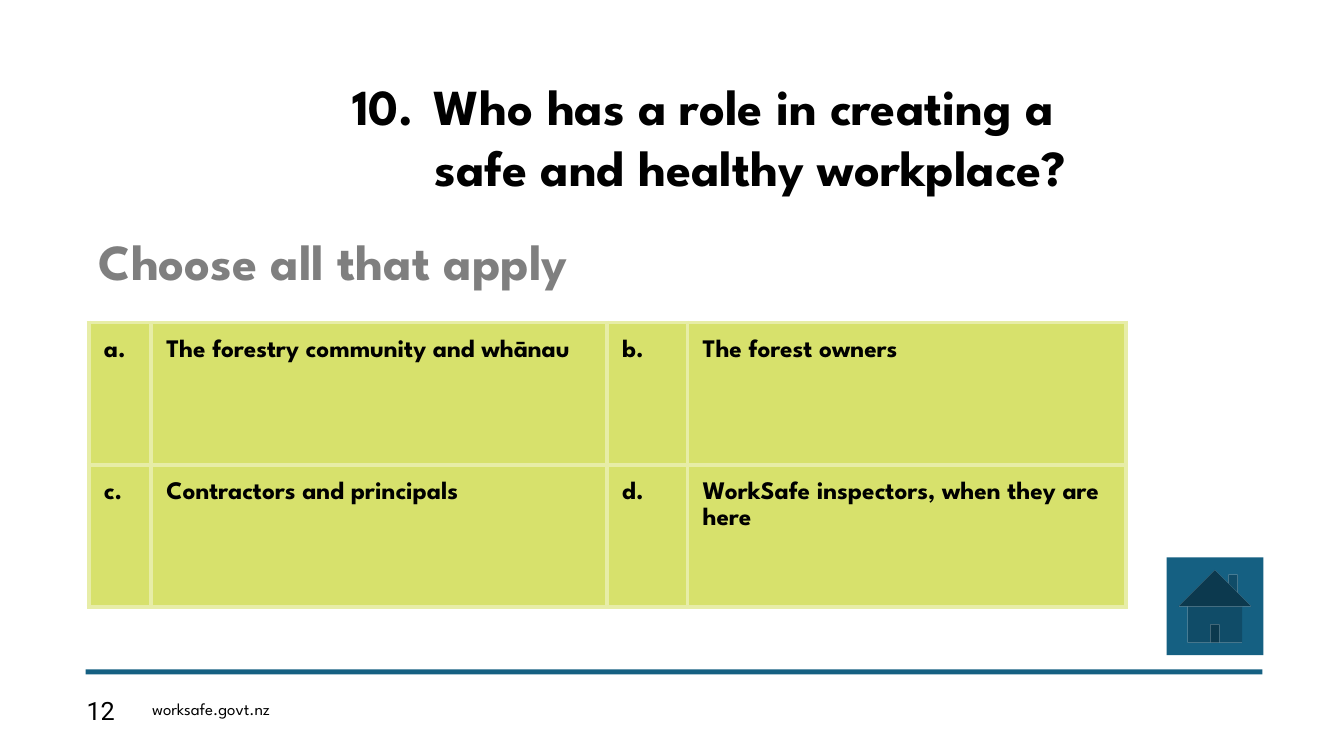
from lxml import etree
from pptx import Presentation
from pptx.dml.color import RGBColor as RGB
from pptx.enum.shapes import MSO_SHAPE as SHAPE
from pptx.enum.text import MSO_ANCHOR as ANCHOR, PP_ALIGN as ALIGN
from pptx.oxml.ns import qn
from pptx.util import Inches, Pt

HUES = {"ink": "000000", "gray": "7F7F7F", "blue": "156082",
        "lime": "D7E16C", "edge": "E7EDA7"}


class Deck:
    """Holds the style and the current slide."""

    def __init__(self):
        self.show = Presentation()
        self.show.slide_width = Inches(13.33)
        self.show.slide_height = Inches(7.5)
        self.slide = self.show.slides.add_slide(self.show.slide_layouts[6])
        self.face = "League Spartan"

    def hue(self, name):
        return RGB.from_string(HUES[name])

    def style(self, para, size, hue="ink", bold=False, face=None):
        for run in para.runs:
            run.font.size = Pt(size)
            run.font.name = face or self.face
            run.font.bold = bold
            run.font.color.rgb = self.hue(hue)

    def text(self, words, x, y, w, h, size, **look):
        frame = self.slide.shapes.add_textbox(
            Inches(x), Inches(y), Inches(w), Inches(h)).text_frame
        frame.word_wrap = True
        frame.text = words
        self.style(frame.paragraphs[0], size, **look)
        return frame

    def title(self, words, start, x, y, w, h):
        frame = self.text(words, x, y, w, h, 36, bold=True)
        frame.vertical_anchor = ANCHOR.MIDDLE
        frame.margin_left = frame.margin_right = 0
        frame.margin_top = frame.margin_bottom = 0
        para = frame.paragraphs[0]
        para.alignment = ALIGN.CENTER
        props = para._p.get_or_add_pPr()
        props.set("marL", str(Inches(0.81)))
        props.set("indent", str(-Inches(0.81)))
        etree.SubElement(props, qn("a:buFont"), typeface="+mj-lt")
        etree.SubElement(props, qn("a:buAutoNum"), type="arabicPeriod",
                         startAt=str(start))

    def shape(self, kind, x, y, w, h, hue):
        item = self.slide.shapes.add_shape(
            kind, Inches(x), Inches(y), Inches(w), Inches(h))
        item.shadow.inherit = False
        item.fill.solid()
        item.fill.fore_color.rgb = self.hue(hue)
        item.line.fill.background()

    def edge(self, cell):
        props = cell._tc.get_or_add_tcPr()
        for spot, side in enumerate(("lnL", "lnR", "lnT", "lnB")):
            line = etree.Element(qn("a:" + side), w=str(Pt(3)))
            fill = etree.SubElement(line, qn("a:solidFill"))
            etree.SubElement(fill, qn("a:srgbClr"), val=HUES["edge"])
            props.insert(spot, line)

    def cell(self, cell, words):
        cell.fill.solid()
        cell.fill.fore_color.rgb = self.hue("lime")
        cell.margin_left = cell.margin_right = Inches(0.15)
        cell.margin_top = cell.margin_bottom = Inches(0.15)
        cell.text = words
        para = cell.text_frame.paragraphs[0]
        para.line_spacing = 1.1
        para.space_after = Pt(12)
        self.style(para, 18, bold=True)
        self.edge(cell)

    def table(self, rows, x, y, wide, high):
        grid = self.slide.shapes.add_table(
            len(rows), len(wide), Inches(x), Inches(y),
            Inches(sum(wide)), Inches(high * len(rows))).table
        for col, w in zip(grid.columns, wide):
            col.width = Inches(w)
        for r, row in enumerate(rows):
            grid.rows[r].height = Inches(high)
            for c, words in enumerate(row):
                self.cell(grid.cell(r, c), words)


def main():
    deck = Deck()
    deck.text("12", 0.76, 6.85, 0.65, 0.4, 18, face="Roboto")
    deck.text("worksafe.govt.nz", 1.41, 6.88, 4.5, 0.36, 12)
    deck.shape(SHAPE.RECTANGLE, 0.85, 6.64, 11.67, 0.05, "blue")
    deck.title("Who has a role in creating a \vsafe and healthy workplace?",
               10, 0.88, 0.69, 12.32, 1.31)
    deck.shape(SHAPE.ACTION_BUTTON_HOME, 11.57, 5.53, 0.96, 0.97, "blue")
    deck.text("Choose all that apply", 0.88, 2.23, 6.66, 0.71, 36,
              hue="gray", bold=True)
    deck.table([
        ("a.", "The forestry community and whānau",
         "b.", "The forest owners"),
        ("c.", "Contractors and principals",
         "d.", "WorkSafe inspectors, when they are here"),
    ], 0.88, 3.2, (0.62, 4.52, 0.8, 4.35), 1.41)
    deck.show.save("out.pptx")


if __name__ == "__main__":
    main()
